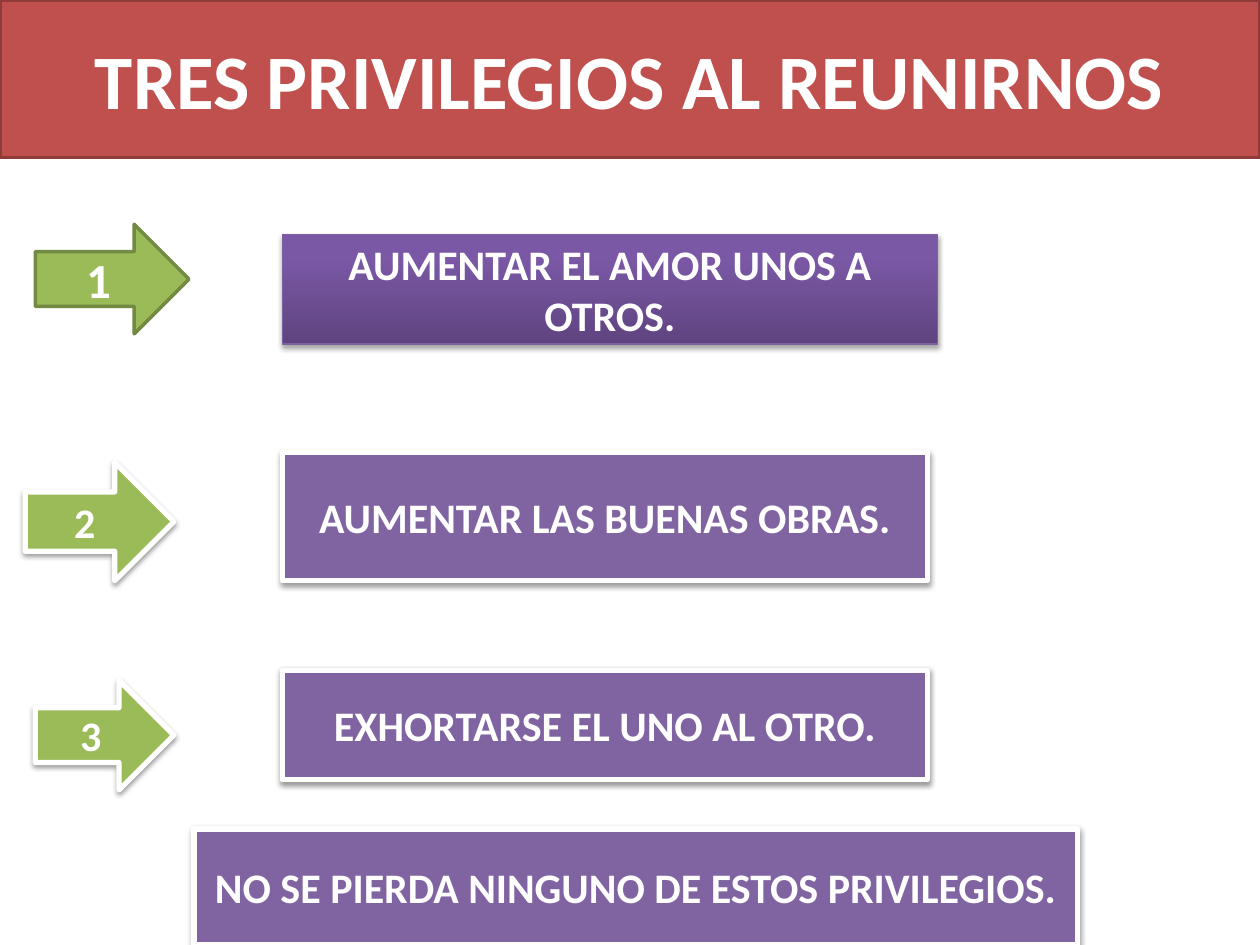
from lxml.etree import SubElement
from pptx import Presentation
from pptx.dml.color import RGBColor
from pptx.enum.shapes import MSO_SHAPE
from pptx.enum.text import MSO_ANCHOR, PP_ALIGN
from pptx.oxml.ns import qn
from pptx.util import Inches, Pt

WHITE = RGBColor(0xFF, 0xFF, 0xFF)
BLACK = RGBColor(0x00, 0x00, 0x00)
RED = RGBColor(0xC0, 0x50, 0x4D)
DARK_RED = RGBColor(0x8E, 0x3B, 0x39)
GREEN = RGBColor(0x9B, 0xBB, 0x59)
DARK_GREEN = RGBColor(0x73, 0x8A, 0x42)
PURPLE = RGBColor(0x80, 0x64, 0xA2)
EDGE_PURPLE = RGBColor(0x7D, 0x60, 0xA0)
DEEP_PURPLE = RGBColor(0x5F, 0x44, 0x80)
LIGHT_PURPLE = RGBColor(0x7B, 0x58, 0xA6)

# Each row: box (left, top, width, height), then arrow and panel boxes inside it
ROWS = [
    ("1", "AUMENTAR EL AMOR UNOS A OTROS.",
     (0.28, 1.78, 7.16, 0.95), (0, 0, 1.22, 0.87), (1.96, 0.08, 5.2, 0.87)),
    ("2", "AUMENTAR LAS BUENAS OBRAS.",
     (0.2, 3.59, 7.16, 1.02), (0, 0.08, 1.18, 0.94), (2.04, 0, 5.12, 1.02)),
    ("3", "EXHORTARSE EL UNO AL OTRO.",
     (0.28, 5.32, 7.08, 0.95), (0, 0.08, 1.1, 0.87), (1.96, 0, 5.12, 0.87)),
]


def set_text(sp, text, size):
    tf = sp.text_frame
    tf.text = text
    tf.word_wrap = True
    tf.vertical_anchor = MSO_ANCHOR.MIDDLE
    p = tf.paragraphs[0]
    p.alignment = PP_ALIGN.CENTER
    p.font.name, p.font.size, p.font.bold = "Calibri", Pt(size), True
    p.font.color.rgb = WHITE


def paint(sp, fill, line, width):
    sp.fill.solid()
    sp.fill.fore_color.rgb = fill
    sp.line.color.rgb = line
    sp.line.width = Pt(width)


def add_shadow(sp, opacity, distance):
    """Drop a soft black shadow straight below the shape."""
    effects = sp._element.spPr.find(qn("a:effectLst"))
    shadow = SubElement(effects, qn("a:outerShdw"), blurRad=str(Pt(3.1)),
                        dist=str(Pt(distance)), dir="5400000", rotWithShape="0")
    color = SubElement(shadow, qn("a:srgbClr"), val=str(BLACK))
    SubElement(color, qn("a:alpha"), val=str(opacity * 1000))


def add_block(s, kind, box, text, fill, line=WHITE, width=3, size=24):
    sp = s.shapes.add_shape(kind, *map(Inches, box))
    paint(sp, fill, line, width)
    sp.shadow.inherit = False
    set_text(sp, text, size)
    return sp


def add_title(s, box):
    sp = s.shapes.title
    sp.left, sp.top, sp.width, sp.height = map(Inches, box)
    paint(sp, RED, DARK_RED, 2)
    set_text(sp, "TRES PRIVILEGIOS AL REUNIRNOS", 44)


def add_row(s, box, number, text, arrow_box, panel_box, first):
    """Place a numbered arrow and its panel; the first row is styled apart."""
    def within(part):
        return box[0] + part[0], box[1] + part[1], part[2], part[3]

    arrow_style = (DARK_GREEN, 2, 28) if first else (WHITE, 3, 24)
    panel_style = (EDGE_PURPLE, 0.75) if first else (WHITE, 3)
    arrow = add_block(s, MSO_SHAPE.RIGHT_ARROW, within(arrow_box), number,
                      GREEN, *arrow_style)
    panel = add_block(s, MSO_SHAPE.RECTANGLE, within(panel_box), text,
                      PURPLE, *panel_style)
    if first:
        panel.fill.gradient()
        panel.fill.gradient_angle = 90
        bottom, top = panel.fill.gradient_stops
        bottom.color.rgb, bottom.position = DEEP_PURPLE, 0
        top.color.rgb, top.position = LIGHT_PURPLE, 0.8
        add_shadow(panel, 35, 1.8)
    else:
        for sp in (arrow, panel):
            add_shadow(sp, 38, 1.6)


def add_closing(s, box):
    sp = add_block(s, MSO_SHAPE.RECTANGLE, box,
                   "NO SE PIERDA NINGUNO DE ESTOS PRIVILEGIOS.", PURPLE)
    add_shadow(sp, 38, 1.6)


def main():
    prs = Presentation()
    prs.slide_width, prs.slide_height = Inches(10), Inches(7.5)
    s = prs.slides.add_slide(prs.slide_layouts[5])
    add_title(s, (0, 0, 10, 1.25))
    for i, (number, text, box, arrow_box, panel_box) in enumerate(ROWS):
        add_row(s, box, number, text, arrow_box, panel_box, first=i == 0)
    add_closing(s, (1.54, 6.58, 7.01, 0.92))
    prs.save("out.pptx")


if __name__ == "__main__":
    main()
